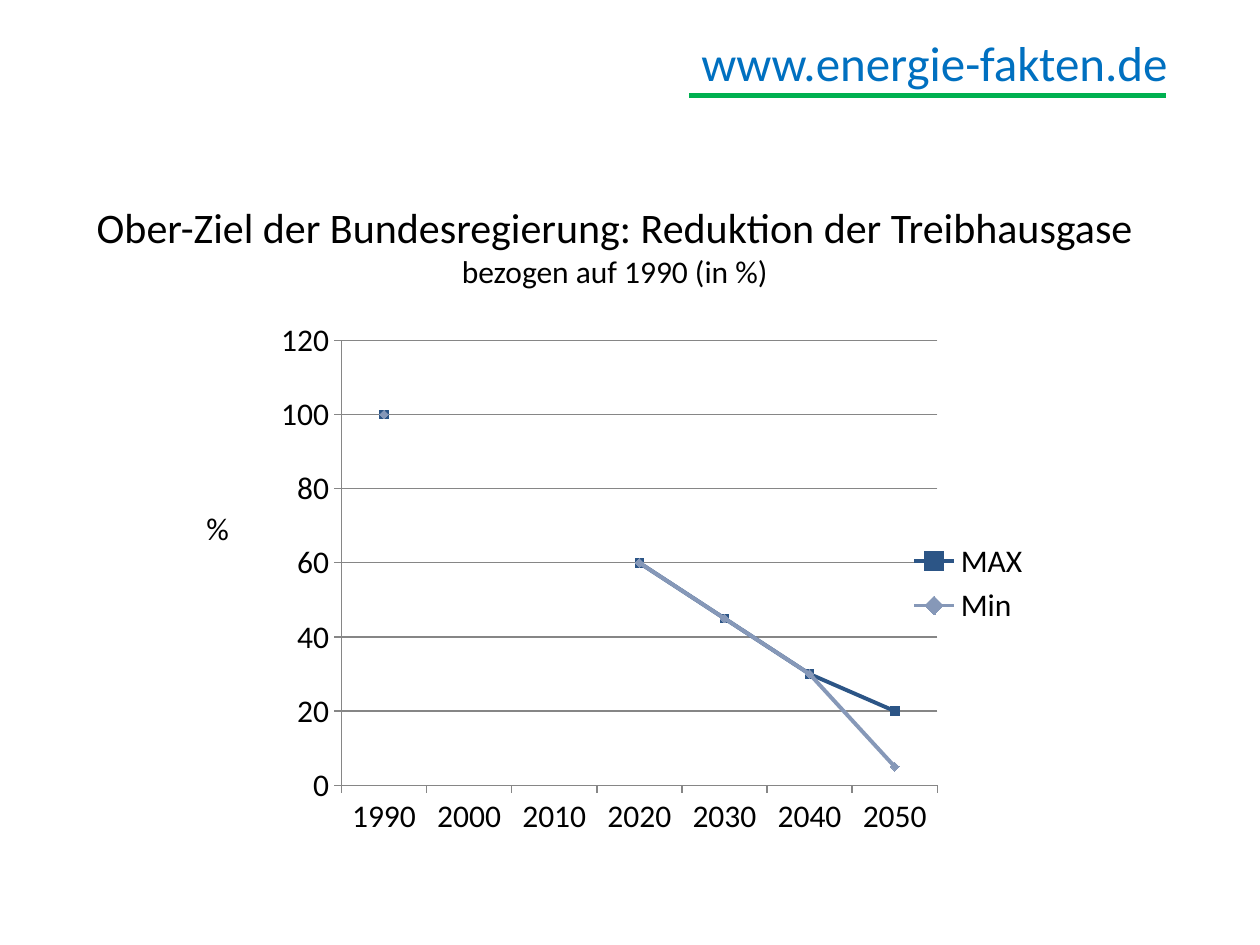
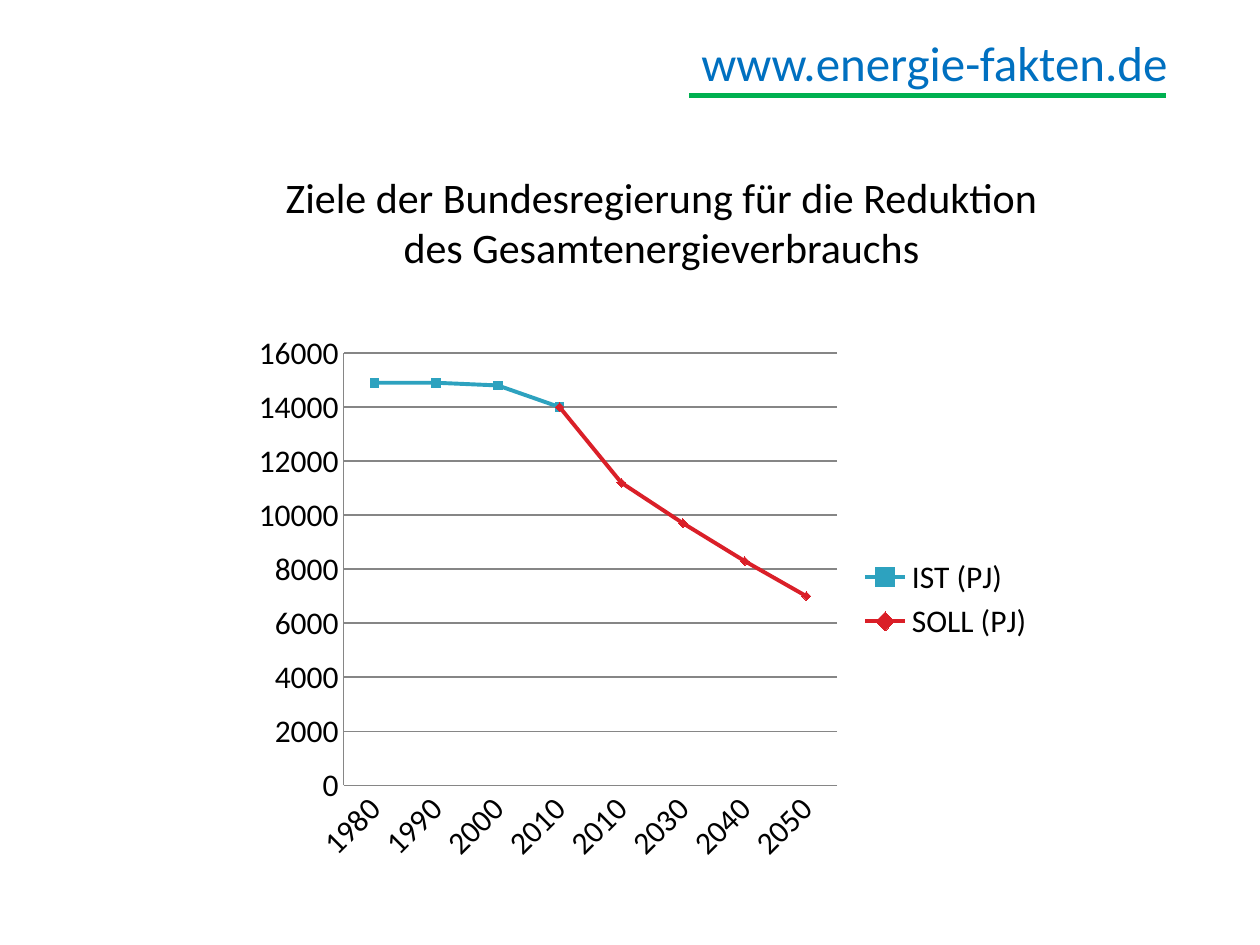
from lxml.etree import SubElement
from pptx import Presentation
from pptx.chart.data import CategoryChartData
from pptx.dml.color import RGBColor
from pptx.enum.chart import (XL_CHART_TYPE, XL_LEGEND_POSITION,
                             XL_MARKER_STYLE, XL_TICK_MARK)
from pptx.enum.shapes import MSO_CONNECTOR
from pptx.enum.text import MSO_AUTO_SIZE, PP_ALIGN
from pptx.oxml import parse_xml
from pptx.oxml.ns import nsdecls, qn
from pptx.util import Cm, Pt

FONT = "Calibri"
BLACK, BLUE, GREEN, GREY = "000000", "0070C0", "00B050", "868686"
MARKERS = (XL_MARKER_STYLE.SQUARE, XL_MARKER_STYLE.DIAMOND)


def rgb(value):
    """Return a colour from a hex string."""
    return RGBColor.from_string(value)


def style_font(font, size, colour=BLACK):
    """Apply the deck's typeface with a size and colour."""
    for name, value in {"name": FONT, "size": Pt(size), "bold": False}.items():
        setattr(font, name, value)
    font.color.rgb = rgb(colour)


def style_line(line, colour, width):
    """Give a line its colour and width in points."""
    line.color.rgb = rgb(colour)
    line.width = Pt(width)


def add_text(s, box, lines, colour=BLACK):
    """Add (text, size) lines; those after the first are centred."""
    tf = s.shapes.add_textbox(*map(Cm, box)).text_frame
    tf.word_wrap = False
    tf.auto_size = MSO_AUTO_SIZE.SHAPE_TO_FIT_TEXT
    for i, (text, size) in enumerate(lines):
        p = tf.add_paragraph() if i else tf.paragraphs[0]
        if i:
            p.alignment = PP_ALIGN.CENTER
        r = p.add_run()
        r.text = text
        style_font(r.font, size, colour)


def add_branded_slide(prs):
    """Add a blank slide with the underlined web address."""
    s = prs.slides.add_slide(prs.slide_layouts[6])
    add_text(s, (13.89, 0.53, 10.16, 1.45), [("www.energie-fakten.de", 28)], BLUE)
    rule = s.shapes.add_connector(MSO_CONNECTOR.STRAIGHT, Cm(13.89), Cm(1.93),
                                  Cm(23.5), Cm(1.93))
    style_line(rule.line, GREEN, 3)
    SubElement(rule._element.spPr, qn("a:effectLst"))
    return s


def place_plot(chart, plot):
    """Fix the inner plot area as fractions of the chart."""
    area = chart._chartSpace.chart.plotArea
    for old in area.findall(qn("c:layout")):
        area.remove(old)
    modes = "".join(f'<c:{a}Mode val="edge"/>' for a in "xy")
    sizes = "".join(f'<c:{a} val="{v}"/>' for a, v in zip("xywh", plot))
    area.insert(0, parse_xml(
        f'<c:layout {nsdecls("c")}><c:manualLayout><c:layoutTarget val="inner"/>'
        f'{modes}{sizes}</c:manualLayout></c:layout>'))


def style_axis(axis, tick, angle=0):
    """Format an axis, turning its labels by an angle in degrees."""
    axis.major_tick_mark = tick
    axis.minor_tick_mark = XL_TICK_MARK.NONE
    style_line(axis.format.line, GREY, 0.75)
    style_font(axis.tick_labels.font, 18)
    body = axis._element.find(qn("c:txPr")).find(qn("a:bodyPr"))
    body.set("rot", str(angle * 60000))


def add_line_chart(s, box, years, series, colours, plot, top, step, tick, angle=0):
    """Add a line chart with markers, gridlines and a legend on the right."""
    data = CategoryChartData()
    data.categories = years
    for name, values in series.items():
        data.add_series(name, values)
    chart = s.shapes.add_chart(XL_CHART_TYPE.LINE_MARKERS, *map(Cm, box), data).chart
    style_font(chart.font, 18)
    chart.has_title = False
    chart.has_legend = True
    chart.legend.position = XL_LEGEND_POSITION.RIGHT
    chart.legend.include_in_layout = False
    style_font(chart.legend.font, 18)
    place_plot(chart, plot)
    style_axis(chart.category_axis, tick, angle)
    axis = chart.value_axis
    style_axis(axis, tick)
    scale = {"minimum_scale": 0, "maximum_scale": top, "major_unit": step,
             "has_major_gridlines": True}
    for name, value in scale.items():
        setattr(axis, name, value)
    style_line(axis.major_gridlines.format.line, GREY, 0.75)
    chart.plots[0].vary_by_categories = False
    for line, colour, marker in zip(chart.plots[0].series, colours, MARKERS):
        line.smooth = False
        style_line(line.format.line, colour, 2.25)
        line.marker.style = marker
        line.marker.size = 5
        line.marker.format.fill.solid()
        line.marker.format.fill.fore_color.rgb = rgb(colour)
        style_line(line.marker.format.line, colour, 0.75)


def add_greenhouse_slide(prs):
    """Show the greenhouse gas targets relative to 1990."""
    s = add_branded_slide(prs)
    years = [str(y) for y in range(1990, 2051, 10)]
    shared = [100, None, None, 60, 45, 30]
    add_line_chart(s, (4.09, 6.12, 16.94, 11.28), years,
                   {"MAX": shared + [20], "Min": shared + [5]},
                   ("2C5586", "8698B8"), (0.165, 0.066, 0.709, 0.795),
                   120, 20, XL_TICK_MARK.OUTSIDE)
    add_text(s, (1.7, 3.94, 22.05, 2.06),
             [("Ober-Ziel der Bundesregierung: Reduktion der Treibhausgase", 24),
              ("bezogen auf 1990 (in %)", 18)])
    add_text(s, (3.91, 10.13, 0.97, 1.02), [("%", 18)])


def add_consumption_slide(prs):
    """Show actual and target total energy consumption."""
    s = add_branded_slide(prs)
    add_text(s, (5.51, 3.33, 16.38, 2.31),
             [("Ziele der Bundesregierung für die Reduktion", 24),
              ("des Gesamtenergieverbrauchs", 24)])
    years = ["1980", "1990", "2000", "2010", "2010", "2030", "2040", "2050"]
    actual = [14900, 14900, 14800, 14000] + [None] * 4
    target = [None] * 3 + [14000, 11200, 9700, 8300, 7000]
    add_line_chart(s, (4.9, 6.53, 16.21, 11.1), years,
                   {"IST (PJ)": actual, "SOLL (PJ)": target},
                   ("2DA2BF", "DA1F28"), (0.125, 0.053, 0.614, 0.785),
                   16000, 2000, XL_TICK_MARK.NONE, -45)


def main():
    """Build and save the presentation."""
    prs = Presentation()
    prs.slide_width, prs.slide_height = Cm(25.4), Cm(19.05)
    add_greenhouse_slide(prs)
    add_consumption_slide(prs)
    prs.save("out.pptx")


if __name__ == "__main__":
    main()
